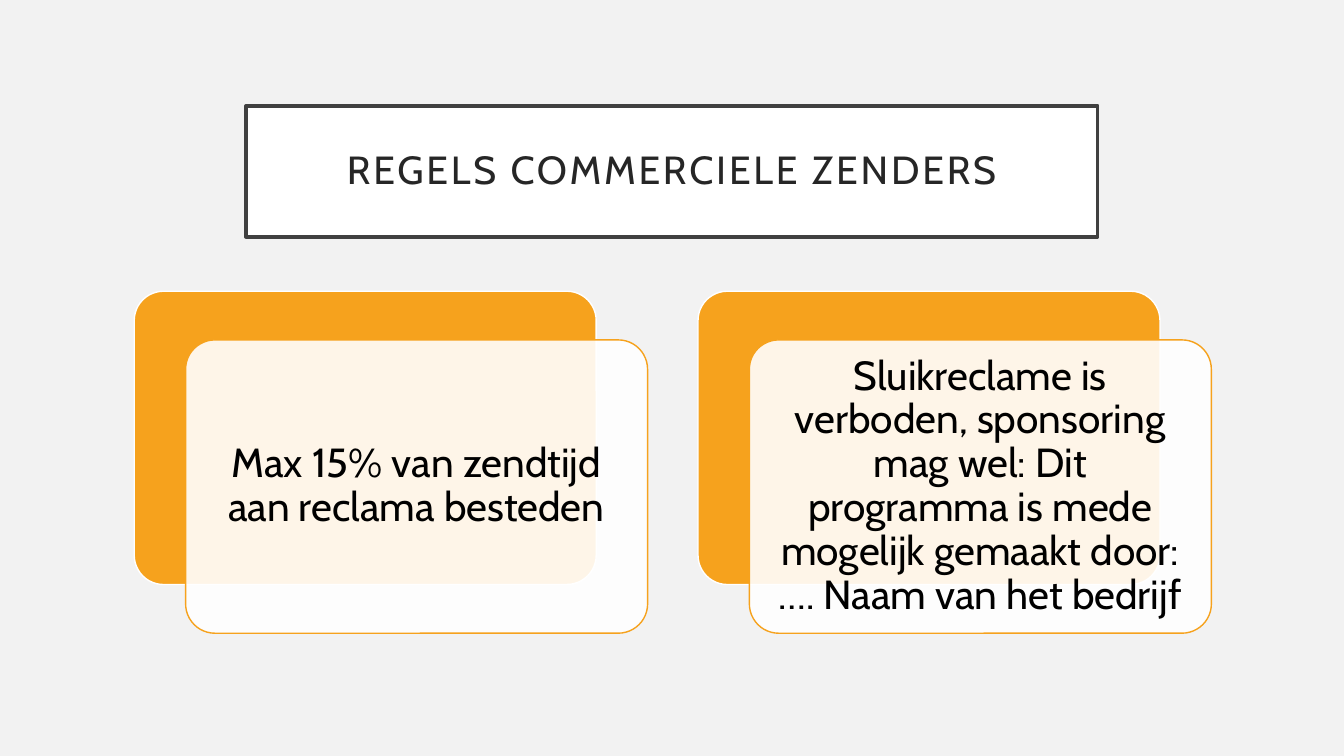
import pptx
import pptx.dml.color
import pptx.enum.shapes
import pptx.enum.text
import pptx.util
from lxml import etree
from pptx.oxml.ns import qn

Pt = pptx.util.Pt
SHAPES = pptx.enum.shapes.MSO_SHAPE
ORANGE = "F6A21D"
WHITE = "FFFFFF"


def color(value):
    return pptx.dml.color.RGBColor.from_string(value)


class RulesSlide:
    font_name = "Cabin"

    def __init__(self, presentation):
        self.slide = presentation.slides.add_slide(presentation.slide_layouts[6])
        background = self.slide.background.fill
        background.solid()
        background.fore_color.rgb = color("F2F2F2")

    def box(self, kind, left, top, width, height, fill, line, line_width=1):
        shape = self.slide.shapes.add_shape(
            kind, Pt(left), Pt(top), Pt(width), Pt(height))
        shape.shadow.inherit = False
        shape.fill.solid()
        shape.fill.fore_color.rgb = color(fill)
        shape.line.color.rgb = color(line)
        shape.line.width = Pt(line_width)
        return shape

    def set_text(self, shape, text, size, text_color, inset):
        frame = shape.text_frame
        frame.word_wrap = True
        frame.vertical_anchor = pptx.enum.text.MSO_ANCHOR.MIDDLE
        frame.margin_left = frame.margin_right = Pt(inset)
        frame.margin_top = frame.margin_bottom = Pt(inset)
        paragraph = frame.paragraphs[0]
        paragraph.text = text
        paragraph.alignment = pptx.enum.text.PP_ALIGN.CENTER
        paragraph.line_spacing = 0.9
        paragraph.font.name = self.font_name
        paragraph.font.size = Pt(size)
        paragraph.font.color.rgb = color(text_color)
        return paragraph

    def title(self, text):
        shape = self.box(SHAPES.RECTANGLE, 175.7, 75.6, 608.4, 93.6,
                         WHITE, "404040", 2.5)
        paragraph = self.set_text(shape, text, 28, "262626", 14.4)
        paragraph.runs[0].font._element.set("spc", "200")

    def rounded(self, left, top, fill, line):
        shape = self.box(SHAPES.ROUNDED_RECTANGLE, left, top, 330, 209.5,
                         fill, line)
        shape.adjustments[0] = 0.1
        return shape

    def card(self, left, top, text):
        """Draw an orange panel with a translucent text panel shifted over it."""
        self.rounded(left, top, ORANGE, WHITE)
        front = self.rounded(left + 36.7, top + 34.8, WHITE, ORANGE)
        fill_color = front._element.spPr.find(
            qn("a:solidFill") + "/" + qn("a:srgbClr"))
        etree.SubElement(fill_color, qn("a:alpha"), val="90000")
        self.set_text(front, text, 29, "000000", 8.6)


def main():
    presentation = pptx.Presentation()
    presentation.slide_width = Pt(960)
    presentation.slide_height = Pt(540)
    rules = RulesSlide(presentation)
    rules.title("REGELS COMMERCIELE ZENDERS")
    texts = [
        "Max 15% van zendtijd aan reclama besteden",
        "Sluikreclame is verboden, sponsoring mag wel: Dit programma is mede "
        "mogelijk gemaakt door: …. Naam van het bedrijf",
    ]
    for column, text in enumerate(texts):
        rules.card(95.9 + column * 402.7, 208, text)
    presentation.save("out.pptx")


if __name__ == "__main__":
    main()
